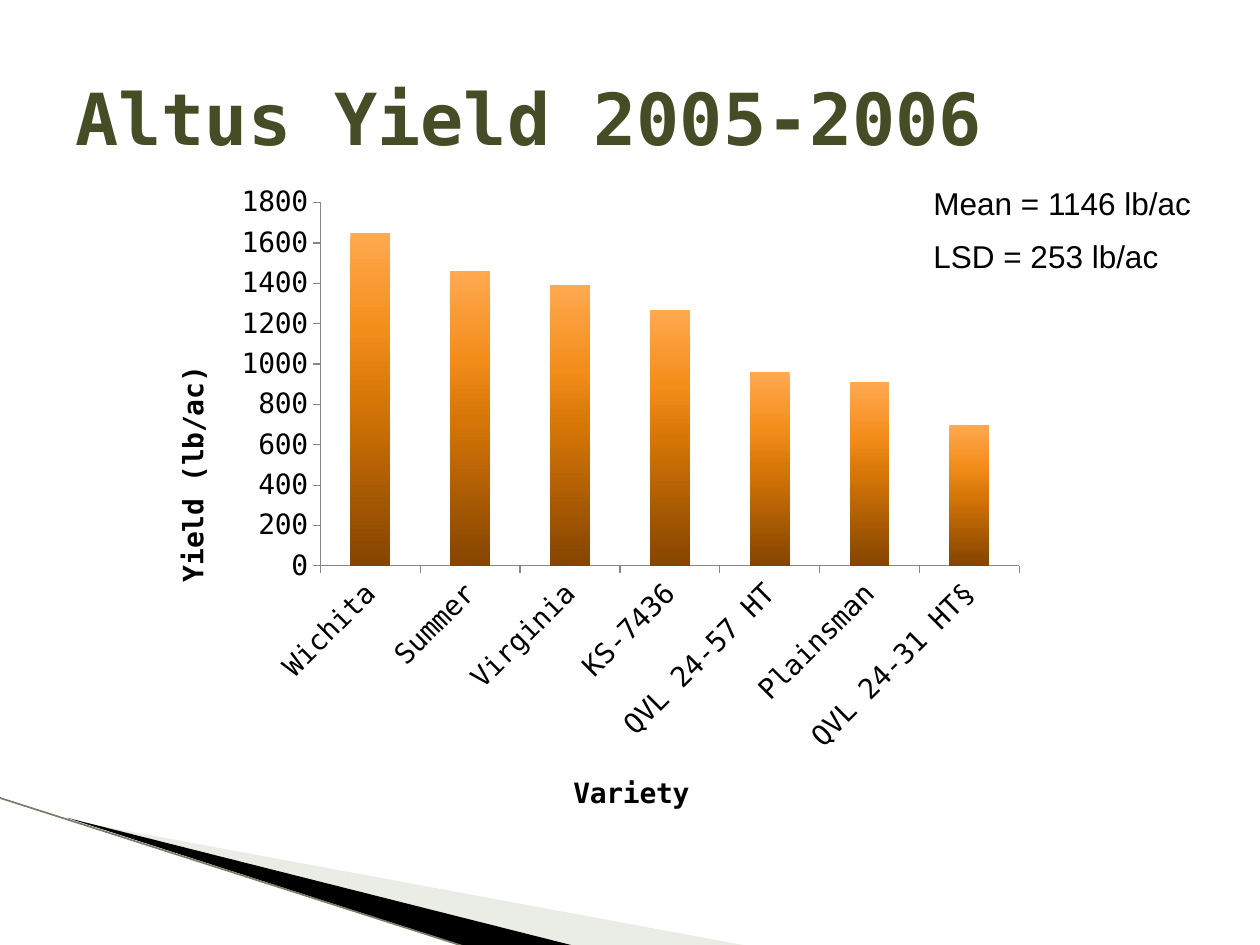
import copy

import pptx
import pptx.chart.data
import pptx.dml.color
import pptx.enum.chart
import pptx.enum.shapes
import pptx.enum.text
import pptx.oxml
import pptx.util
from pptx.oxml.ns import qn

Inches = pptx.util.Inches
Pt = pptx.util.Pt
MONO = "DejaVu Sans Mono"
BAR_STOPS = [(0, "FFA950"), (0.3, "F28D1A"), (0.5, "D67607"), (1, "854400")]


def color(hex_string):
    return pptx.dml.color.RGBColor.from_string(hex_string)


def style_font(font, name, size, hex_string, bold=False):
    font.name = name
    font.size = Pt(size)
    font.bold = bold
    font.color.rgb = color(hex_string)


def add_wedge(slide, points, hex_string, opacity=100):
    corners = [(Inches(x), Inches(y)) for x, y in points]
    builder = slide.shapes.build_freeform(*corners[0])
    builder.add_line_segments(corners[1:], close=True)
    wedge = builder.convert_to_shape()
    wedge.shadow.inherit = False
    wedge.fill.solid()
    wedge.fill.fore_color.rgb = color(hex_string)
    wedge.line.fill.background()
    if opacity < 100:
        fill_color = wedge.fill._xPr.find(qn("a:solidFill"))[0]
        alpha = fill_color.makeelement(qn("a:alpha"), {"val": str(opacity * 1000)})
        fill_color.append(alpha)


def add_corner_sweep(slide, left, top):
    pale = [(0.55, 0.18), (5.95, 1.18), (4.56, 1.18)]
    dark = [(0.53, 0.16), (4.57, 1.18), (3.72, 1.19)]
    for outline, hex_string, opacity in ((pale, "CBD4C0", 40), (dark, "000000", 100)):
        add_wedge(slide, [(left + x, top + y) for x, y in outline], hex_string, opacity)
    edge = slide.shapes.add_connector(
        pptx.enum.shapes.MSO_CONNECTOR.STRAIGHT,
        Inches(left - 0.01), Inches(top), Inches(left + 3.71), Inches(top + 1.19))
    edge.line.color.rgb = color("7A7D68")
    edge.line.width = Pt(0.95)
    properties = edge._element.spPr
    properties.append(properties.makeelement(qn("a:effectLst"), {}))


def add_text(slide, box, lines, name, size, hex_string, bold=False, gap=0):
    frame = slide.shapes.add_textbox(*map(Inches, box)).text_frame
    frame.word_wrap = True
    frame.text = "\n".join(lines)
    for index, paragraph in enumerate(frame.paragraphs):
        style_font(paragraph.font, name, size, hex_string, bold)
        if index:
            paragraph.space_before = Pt(gap)
    return frame


def add_title(slide, box):
    title = add_text(slide, box, ["Altus Yield 2005-2006"], MONO, 41, "444D26", True)
    title.vertical_anchor = pptx.enum.text.MSO_ANCHOR.MIDDLE


def add_statistics(slide, box):
    add_text(slide, box, ["Mean = 1146 lb/ac", "LSD = 253 lb/ac"],
             "Arial", 18, "000000", gap=9)


def set_layout(parent, **fractions):
    for old in parent.findall(qn("c:layout")):
        parent.remove(old)
    layout = parent.makeelement(qn("c:layout"), {})
    manual = parent.makeelement(qn("c:manualLayout"), {})
    layout.append(manual)
    settings = {"xMode": "edge", "yMode": "edge", **fractions}
    if "w" in fractions:
        settings = {"layoutTarget": "inner", **settings}
    for key, value in settings.items():
        manual.append(parent.makeelement(qn("c:" + key), {"val": str(value)}))
    text = parent.find(qn("c:tx"))
    parent.insert(0 if text is None else 1, layout)


def fill_bars(series):
    series.format.fill.gradient()
    series.format.fill.gradient_angle = 270
    stops = series._element.find(".//" + qn("a:gsLst"))
    for _ in BAR_STOPS[2:]:
        stops.append(copy.deepcopy(stops[0]))
    for stop, (position, hex_string) in zip(series.format.fill.gradient_stops, BAR_STOPS):
        stop.position = position
        stop.color.rgb = color(hex_string)


def style_axis(axis, title, x, y):
    axis.has_major_gridlines = False
    axis.major_tick_mark = pptx.enum.chart.XL_TICK_MARK.OUTSIDE
    axis.minor_tick_mark = pptx.enum.chart.XL_TICK_MARK.NONE
    axis.format.line.color.rgb = color("868686")
    axis.format.line.width = Pt(0.75)
    style_font(axis.tick_labels.font, MONO, 16, "000000")
    axis.axis_title.text_frame.text = title
    heading = axis.axis_title.text_frame.paragraphs[0]
    style_font(heading.runs[0].font, MONO, 16, "000000", True)
    set_layout(axis.axis_title._element, x=x, y=y)


def add_yield_chart(slide, box):
    yields = {
        "Wichita": 1650, "Summer": 1460, "Virginia": 1390, "KS-7436": 1270,
        "QVL 24-57 HT": 960, "Plainsman": 910, "QVL 24-31 HT§": 700,
    }
    data = pptx.chart.data.CategoryChartData()
    data.categories = list(yields)
    data.add_series("Series 1", list(yields.values()))
    chart = slide.shapes.add_chart(
        pptx.enum.chart.XL_CHART_TYPE.COLUMN_CLUSTERED, *map(Inches, box), data).chart
    chart.has_legend = False
    chart.has_title = False
    style_font(chart.font, MONO, 16, "000000")
    plot = chart.plots[0]
    plot.vary_by_categories = False
    plot.gap_width = 150
    fill_bars(plot.series[0])
    style_axis(chart.category_axis, "Variety", 0.47, 0.9)
    style_axis(chart.value_axis, "Yield (lb/ac)", 0.02, 0.28)
    chart.category_axis._element.find(qn("c:txPr")).find(qn("a:bodyPr")).set("rot", "-2700000")
    heading_body = chart.value_axis.axis_title.text_frame._txBody.find(qn("a:bodyPr"))
    heading_body.set("rot", "-5400000")
    heading_body.set("vert", "horz")
    chart.value_axis.minimum_scale = 0
    chart.value_axis.maximum_scale = 1800
    chart.value_axis.major_unit = 200
    set_layout(chart._chartSpace.chart.plotArea, x=0.19, y=0.04, w=0.79, h=0.55)


def main():
    deck = pptx.Presentation()
    deck.slide_width = Inches(10)
    deck.slide_height = Inches(7.5)
    slide = deck.slides.add_slide(deck.slide_layouts[6])
    add_corner_sweep(slide, 0, 6.33)
    add_title(slide, (0.5, 0.3, 9, 1.25))
    add_statistics(slide, (7.31, 1.41, 2.39, 0.86))
    add_yield_chart(slide, (1.21, 1.4, 7.02, 5.24))
    deck.save("out.pptx")


if __name__ == "__main__":
    main()
